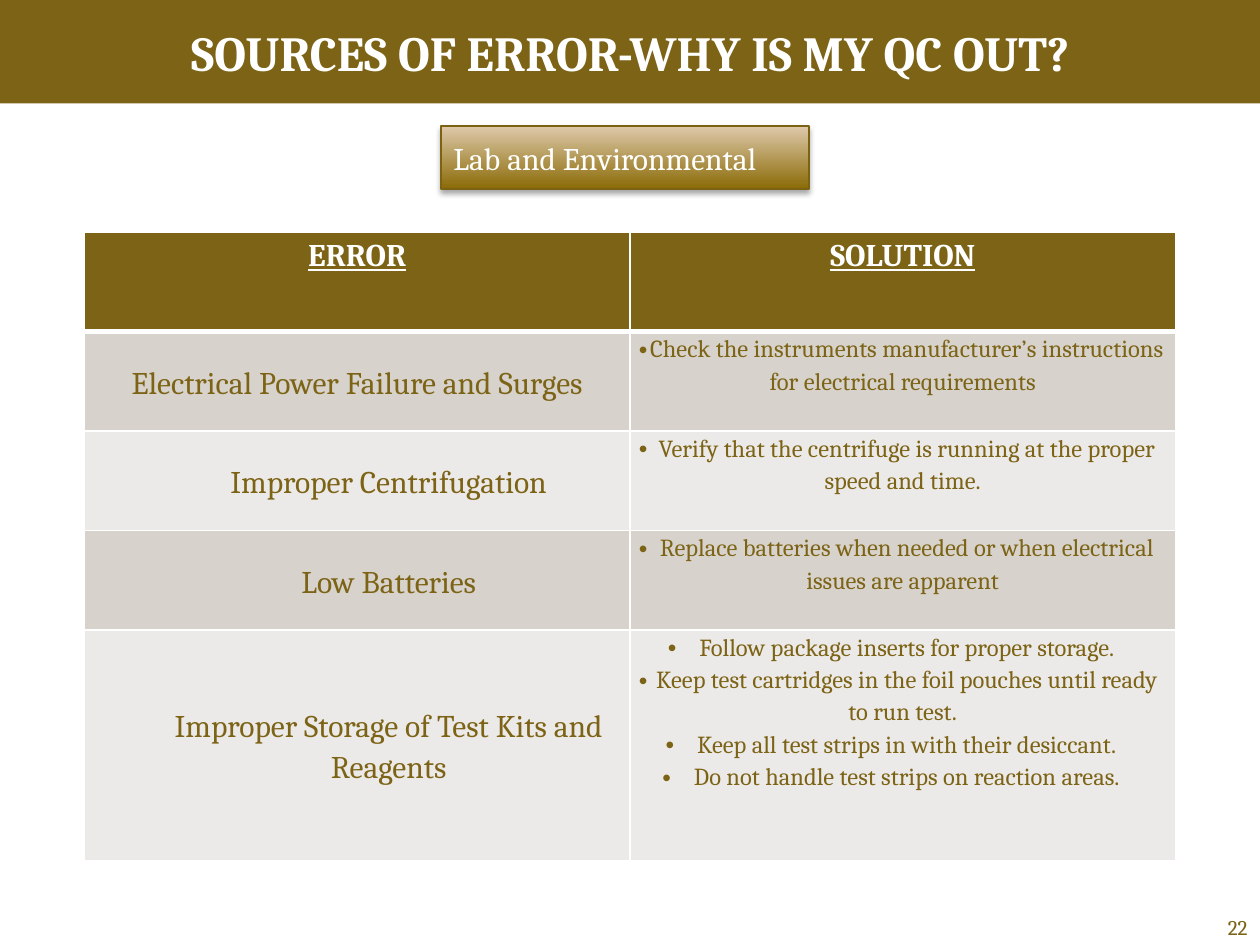
from lxml import etree
from pptx import Presentation
from pptx.dml.color import RGBColor
from pptx.enum.shapes import MSO_SHAPE as Shape
from pptx.enum.text import MSO_ANCHOR as Anchor, PP_ALIGN as Align
from pptx.oxml import parse_xml
from pptx.oxml.ns import nsdecls, qn
from pptx.util import Inches, Pt

OLIVE = RGBColor(0x7C, 0x63, 0x16)
EDGE = RGBColor(0x7C, 0x62, 0x13)
DARK_GOLD = RGBColor(0x8B, 0x6B, 0x07)
SAND = RGBColor(0xDE, 0xC9, 0xAB)
WHITE = RGBColor(0xFF, 0xFF, 0xFF)
BANDS = [RGBColor(0xD7, 0xD3, 0xCC), RGBColor(0xEC, 0xEA, 0xE8)]
FONT = "Cambria"

ROWS = [
    ("Electrical Power Failure and Surges", 0,
     ["Check the instruments manufacturer’s instructions for electrical requirements"]),
    ("Improper Centrifugation", 0.5,
     ["Verify that the centrifuge is running at the proper speed and time."]),
    ("Low Batteries", 0.5,
     ["Replace batteries when needed or when electrical issues are apparent"]),
    ("Improper Storage of Test Kits and Reagents", 0.5,
     ["Follow package inserts for proper storage.",
      "Keep test cartridges in the foil pouches until ready to run test.",
      "Keep all test strips in with their desiccant.",
      "Do not handle test strips on reaction areas."]),
]


class SlideBuilder:
    def __init__(self, page):
        self.page = page

    def style(self, para, size, color, align=Align.CENTER, bold=False, underline=False):
        para.alignment = align
        font = para.font
        font.name, font.size, font.bold = FONT, Pt(size), bold
        font.underline = underline
        font.color.rgb = color

    def bar(self, left, top, width, height, fill):
        bar = self.page.shapes.add_shape(
            Shape.RECTANGLE, Inches(left), Inches(top), Inches(width), Inches(height))
        bar.shadow.inherit = False
        bar.fill.solid()
        bar.fill.fore_color.rgb = fill
        bar.line.fill.background()

    def text(self, text, left, top, width, height, size, color, align, anchor,
             right=0, bottom=0, bold=False):
        box = self.page.shapes.add_textbox(
            Inches(left), Inches(top), Inches(width), Inches(height))
        frame = box.text_frame
        frame.word_wrap = True
        frame.vertical_anchor = anchor
        frame.margin_left = frame.margin_top = 0
        frame.margin_right, frame.margin_bottom = Inches(right), Inches(bottom)
        frame.text = text
        self.style(frame.paragraphs[0], size, color, align, bold)

    def badge(self, text, left, top, width, height):
        badge = self.page.shapes.add_shape(
            Shape.RECTANGLE, Inches(left), Inches(top), Inches(width), Inches(height))
        badge.fill.gradient()
        badge.fill.gradient_angle = 90
        for stop, color, position in zip(badge.fill.gradient_stops, (DARK_GOLD, SAND), (0, 1)):
            stop.color.rgb = color
            stop.position = position
        badge.line.color.rgb = EDGE
        badge.line.width = Pt(0.75)
        badge.shadow.inherit = False
        effects = badge._element.spPr.find(qn("a:effectLst"))
        effects.append(parse_xml(
            f'<a:outerShdw {nsdecls("a")} blurRad="{Pt(3.1)}" dist="{Pt(1.8)}" dir="5400000" '
            'rotWithShape="0"><a:srgbClr val="000000"><a:alpha val="35000"/></a:srgbClr>'
            '</a:outerShdw>'))
        frame = badge.text_frame
        frame.vertical_anchor = Anchor.MIDDLE
        frame.text = text
        self.style(frame.paragraphs[0], 18, WHITE, Align.LEFT)

    def table(self, left, top, widths, heights):
        table = self.page.shapes.add_table(
            len(heights), len(widths), Inches(left), Inches(top),
            Inches(sum(widths)), Inches(sum(heights))).table
        for column, width in zip(table.columns, widths):
            column.width = Inches(width)
        for row, height in zip(table.rows, heights):
            row.height = Inches(height)
        return table

    def borders(self, cell, bottom):
        properties = cell._tc.get_or_add_tcPr()
        for index, (side, width) in enumerate(zip("LRTB", (1, 1, 1, bottom))):
            properties.insert(index, parse_xml(
                f'<a:ln{side} {nsdecls("a")} w="{Pt(width)}"><a:solidFill>'
                f'<a:srgbClr val="{WHITE}"/></a:solidFill></a:ln{side}>'))

    def cell(self, cell, fill, bottom=1):
        cell.fill.solid()
        cell.fill.fore_color.rgb = fill
        self.borders(cell, bottom)

    def header(self, cell, text):
        self.cell(cell, OLIVE, 3)
        cell.text = text
        self.style(cell.text_frame.paragraphs[0], 18, WHITE, bold=True, underline=True)

    def body(self, cell, lines, fill, size, indent=0, bullet=False):
        self.cell(cell, fill)
        cell.margin_left = cell.margin_right = Inches(0.07)
        cell.margin_top = cell.margin_bottom = 0
        cell.vertical_anchor = Anchor.TOP if bullet else Anchor.MIDDLE
        cell.text = "\n".join(lines)
        for para in cell.text_frame.paragraphs:
            para.line_spacing = 1.15
            properties = para._p.get_or_add_pPr()
            properties.set("marL", str(Inches(indent)))
            properties.set("indent", str(Inches(-0.25 if bullet else 0)))
            if bullet:
                etree.SubElement(properties, qn("a:buFont"), typeface="Arial")
                etree.SubElement(properties, qn("a:buChar"), char="•")
            self.style(para, size, OLIVE)


def main():
    deck = Presentation()
    deck.slide_width, deck.slide_height = Inches(10), Inches(7.5)
    builder = SlideBuilder(deck.slides.add_slide(deck.slide_layouts[6]))

    builder.bar(0, 0, 10, 0.82, OLIVE)
    table = builder.table(0.67, 1.84, [4.33] * 2, [0.79] * 4 + [1.83])
    for column, heading in enumerate(("ERROR", "SOLUTION")):
        builder.header(table.cell(0, column), heading)
    for index, (error, indent, solutions) in enumerate(ROWS):
        fill = BANDS[index % 2]
        builder.body(table.cell(index + 1, 0), [error], fill, 18, indent)
        builder.body(table.cell(index + 1, 1), solutions, fill, 14, bullet=True)

    builder.text("SOURCES OF ERROR-WHY IS MY QC OUT?", 0.5, 0, 9, 0.83, 28, WHITE,
                 Align.CENTER, Anchor.MIDDLE, bold=True)
    builder.text("22", 9.25, 7.25, 0.75, 0.26, 12, OLIVE, Align.RIGHT, Anchor.BOTTOM,
                 right=0.1, bottom=0.05)
    builder.badge("Lab and Environmental", 3.5, 1, 2.92, 0.5)
    deck.save("out.pptx")


if __name__ == "__main__":
    main()
